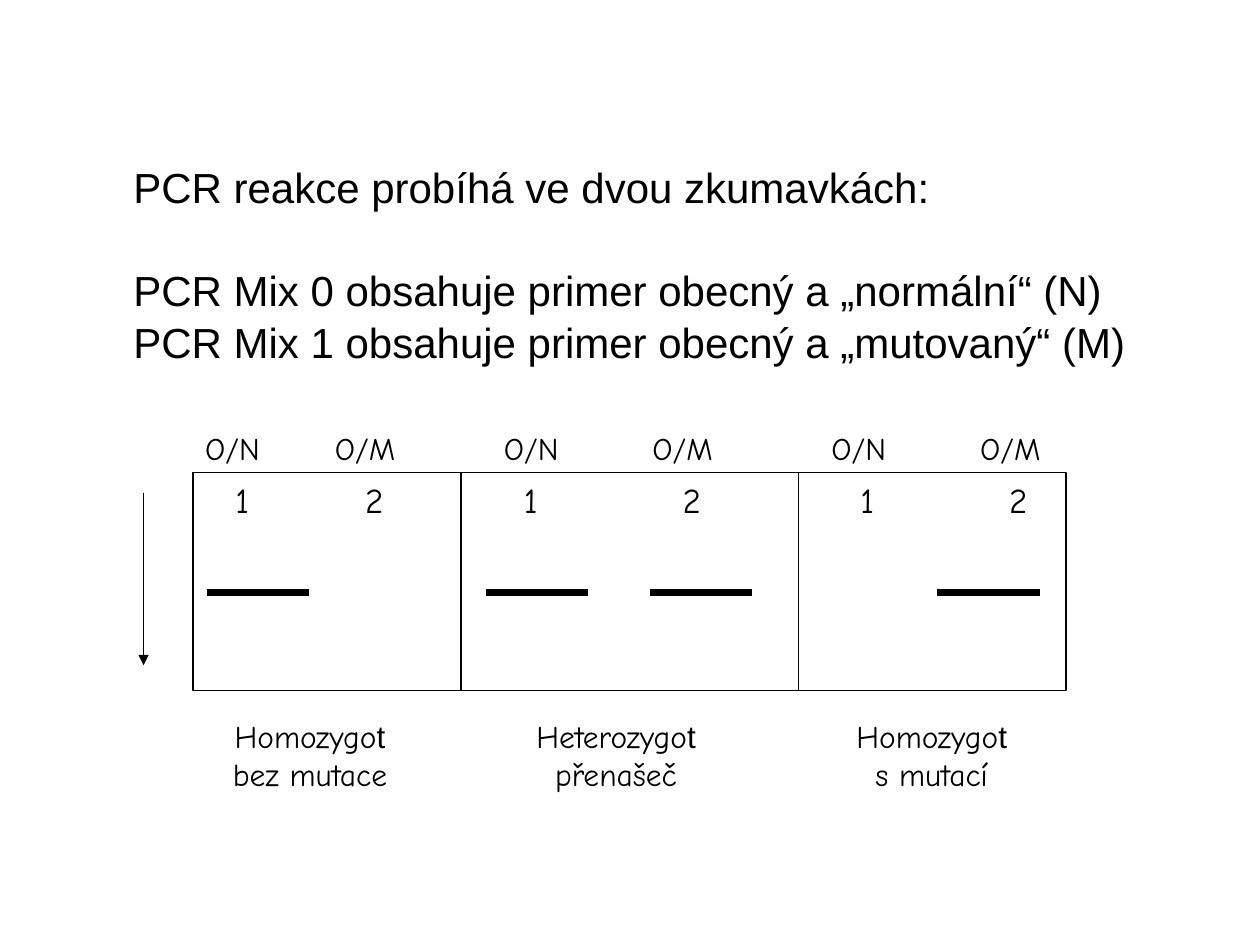
from pptx import Presentation
from pptx.dml.color import RGBColor
from pptx.enum.shapes import MSO_CONNECTOR, MSO_SHAPE
from pptx.enum.text import PP_ALIGN
from pptx.oxml.ns import qn
from pptx.util import Inches, Pt
from lxml.etree import SubElement

BLACK = RGBColor(0, 0, 0)
HEADING_FONT = "Arial"
LABEL_FONT = "Comic Neue"


def write_text(frame, paragraphs, size=18, align=PP_ALIGN.LEFT, gaps=()):
    for index, runs in enumerate(paragraphs):
        paragraph = frame.paragraphs[0] if index == 0 else frame.add_paragraph()
        paragraph.alignment = align
        if index < len(gaps):
            paragraph.space_before = Pt(gaps[index])
        for words, font in runs:
            run = paragraph.add_run()
            run.text = words
            run.font.name = font
            run.font.size = Pt(size)
            run.font.color.rgb = BLACK


class GelSlide:
    def __init__(self, presentation):
        self.shapes = presentation.slides.add_slide(presentation.slide_layouts[6]).shapes

    def text(self, left, top, width, height, paragraphs, wrap=False, **style):
        box = self.shapes.add_textbox(Inches(left), Inches(top), Inches(width), Inches(height))
        box.text_frame.word_wrap = wrap
        write_text(box.text_frame, paragraphs, **style)

    def frame(self, left, top, width, height):
        outline = self.shapes.add_shape(
            MSO_SHAPE.RECTANGLE, Inches(left), Inches(top), Inches(width), Inches(height))
        outline.shadow.inherit = False
        outline.fill.background()
        outline.line.color.rgb = BLACK
        outline.line.width = Pt(1)

    def line(self, x1, y1, x2, y2, weight, arrow=False):
        connector = self.shapes.add_connector(
            MSO_CONNECTOR.STRAIGHT, Inches(x1), Inches(y1), Inches(x2), Inches(y2))
        connector.line.color.rgb = BLACK
        connector.line.width = Pt(weight)
        properties = connector._element.spPr
        if arrow:
            SubElement(connector.line._get_or_add_ln(), qn("a:tailEnd"), type="triangle")
        SubElement(properties, qn("a:effectLst"))


def main():
    presentation = Presentation()
    presentation.slide_width, presentation.slide_height = Inches(10), Inches(7.5)
    slide = GelSlide(presentation)

    reaction = [
        "PCR reakce probíhá ve dvou zkumavkách:",
        "PCR Mix 0 obsahuje primer obecný a „normální“ (N)",
        "PCR Mix 1 obsahuje primer obecný a „mutovaný“ (M)",
    ]
    slide.text(0.96, 1.23, 8.17, 1.69, [[(words, HEADING_FONT)] for words in reaction],
               size=24, gaps=(0, 30, 1))

    gel_left, gel_top, gel_width, gel_height = 1.53, 3.75, 6.93, 1.73
    gel_bottom = gel_top + gel_height
    slide.frame(gel_left, gel_top, gel_width, gel_height)
    for divider in (3.66, 6.34):
        slide.line(divider, gel_top, divider, gel_bottom, 0.75)
    slide.line(1.14, 3.91, 1.14, 5.28, 1, arrow=True)

    for band in (1.64, 3.86, 5.16, 7.44):
        slide.line(band, 4.7, band + 0.81, 4.7, 4)

    lanes = [
        ("O/N", 1.53, "1", 1.77), ("O/M", 2.56, "2", 2.8),
        ("O/N", 3.9, "1", 4.06), ("O/M", 5.08, "2", 5.32),
        ("O/N", 6.5, "1", 6.73), ("O/M", 7.68, "2", 7.91),
    ]
    for primers, primers_left, tube, tube_left in lanes:
        slide.text(primers_left, 3.36, 0.75, 0.4, [[(primers, LABEL_FONT)]])
        slide.text(tube_left, gel_top, 0.35, 0.43, [[(tube, LABEL_FONT)]], size=20)

    genotypes = [
        ("Homozygo", "bez mutace", 1.67, 1.58),
        ("Heterozygo", "přenašeč", 4.06, 1.66),
        ("Homozygo", "s mutací", 6.66, 1.47),
    ]
    for zygosity, status, left, width in genotypes:
        slide.text(left, 5.64, width, 0.7,
                   [[(zygosity, LABEL_FONT), ("t", HEADING_FONT)], [(status, LABEL_FONT)]],
                   align=PP_ALIGN.CENTER)

    presentation.save("out.pptx")


if __name__ == "__main__":
    main()
